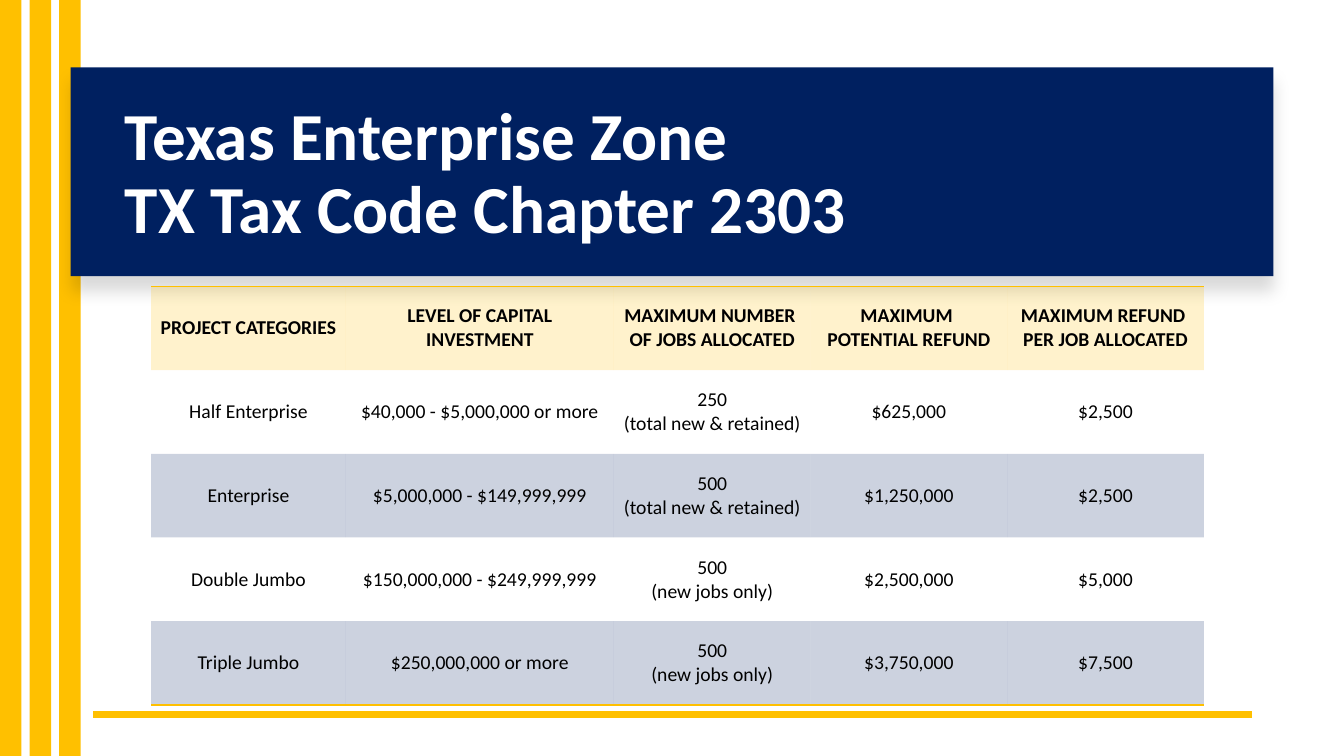
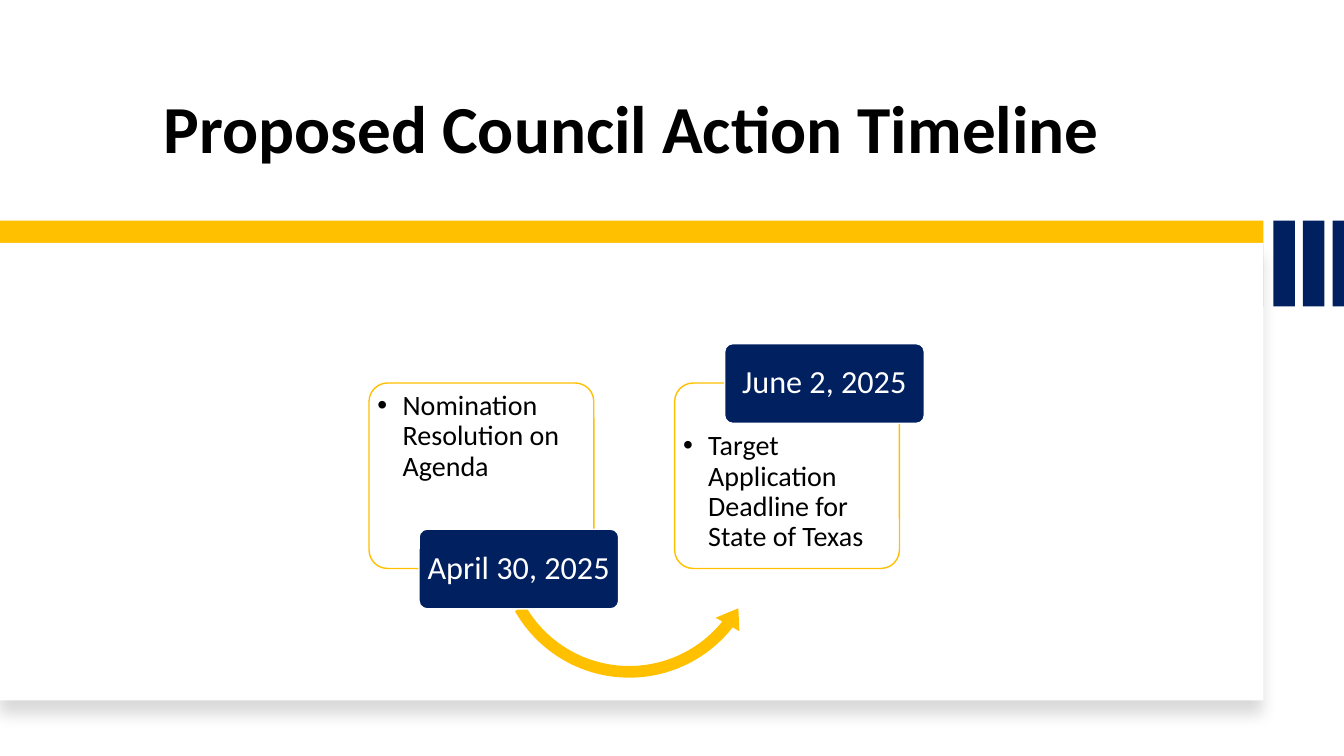
from lxml import etree
from pptx import Presentation
from pptx.dml.color import RGBColor
from pptx.enum.shapes import MSO_CONNECTOR, MSO_SHAPE
from pptx.enum.text import MSO_ANCHOR, PP_ALIGN
from pptx.oxml.ns import qn
from pptx.util import Inches, Pt

RECT = MSO_SHAPE.RECTANGLE
ROUND = MSO_SHAPE.ROUNDED_RECTANGLE
CURVE = MSO_SHAPE.LEFT_CIRCULAR_ARROW
LINE = MSO_CONNECTOR.STRAIGHT
LEFT, CENTER = PP_ALIGN.LEFT, PP_ALIGN.CENTER
TOP, MIDDLE, BOTTOM = MSO_ANCHOR.TOP, MSO_ANCHOR.MIDDLE, MSO_ANCHOR.BOTTOM

FONT = "Calibri"
COLORS = {"gold": "FFC000", "navy": "002060", "white": "FFFFFF", "black": "000000"}
PLAIN = "{2D5ABB26-0587-4C30-8999-92F81FD0307C}"
PAGE = (0, 0, Inches(13.33), Inches(7.5))

HEADS = ["PROJECT CATEGORIES", "LEVEL OF CAPITAL INVESTMENT",
         "MAXIMUM NUMBER \vOF JOBS ALLOCATED", "MAXIMUM \vPOTENTIAL REFUND",
         "MAXIMUM REFUND \vPER JOB ALLOCATED"]
ROWS = [
    ["Half Enterprise", "$40,000 - $5,000,000 or more",
     "250\n(total new & retained)", "$625,000", "$2,500"],
    ["Enterprise", "$5,000,000 - $149,999,999",
     "500\n(total new & retained)", "$1,250,000", "$2,500"],
    ["Double Jumbo", "$150,000,000 - $249,999,999",
     "500\n(new jobs only)", "$2,500,000", "$5,000"],
    ["Triple Jumbo", "$250,000,000 or more",
     "500\n(new jobs only)", "$3,750,000", "$7,500"],
]
SHARES = [1.93, 2.66, 1.95, 1.95, 1.95]
STEPS = [
    ("April 30, 2025", "Nomination Resolution on Agenda", 54.28, 0.03),
    ("June 2, 2025", "Target Application Deadline for State of Texas", 0, 0.43),
]


def part(box, x, y, w, h):
    left, top, wide, high = box
    return (left + round(wide * x / 100), top + round(high * y / 100),
            round(wide * w / 100), round(high * h / 100))


def rgb(name):
    return RGBColor.from_string(COLORS[name])


def paint(fill, name, alpha=100):
    fill.solid()
    fill.fore_color.rgb = rgb(name)
    if alpha < 100:
        color = fill._xPr.find(qn("a:solidFill"))[0]
        etree.SubElement(color, qn("a:alpha"), val=str(alpha * 1000))


def block(slide, box, fill, kind=RECT, line=None, alpha=100):
    shape = slide.shapes.add_shape(kind, *box)
    shape.shadow.inherit = False
    paint(shape.fill, fill, alpha)
    if line:
        shape.line.color.rgb = rgb(line)
        shape.line.width = Pt(1)
    else:
        shape.line.fill.background()
    return shape


def shade(shape):
    effects = shape._element.spPr.find(qn("a:effectLst"))
    cast = etree.SubElement(effects, qn("a:outerShdw"), blurRad=str(Pt(11)),
                            dist=str(Pt(10)), dir="5400000", algn="t", rotWithShape="0")
    color = etree.SubElement(cast, qn("a:srgbClr"), val=COLORS["black"])
    etree.SubElement(color, qn("a:alpha"), val="15000")


def write(frame, text, size, color="black", bold=False, align=CENTER, space=None):
    frame.word_wrap = True
    for i, words in enumerate(text.split("\n")):
        para = frame.add_paragraph() if i else frame.paragraphs[0]
        para.alignment = align
        if space:
            para.line_spacing = space
        for j, piece in enumerate(words.split("\v")):
            if j:
                para.add_line_break()
            run = para.add_run()
            run.text = piece
            run.font.name = FONT
            run.font.size = Pt(size)
            run.font.bold = bold
            run.font.color.rgb = rgb(color)


def inset(frame, side, top):
    frame.margin_left = frame.margin_right = Inches(side)
    frame.margin_top = frame.margin_bottom = Inches(top)


def bullet(para):
    props = para._p.get_or_add_pPr()
    props.set("marL", str(Inches(0.25)))
    props.set("indent", str(-Inches(0.25)))
    etree.SubElement(props, qn("a:buFont"), typeface="Arial")
    etree.SubElement(props, qn("a:buChar"), char="•")


def title(slide, box, text, color, align, anchor):
    frame = slide.shapes.add_textbox(*box).text_frame
    frame.vertical_anchor = anchor
    write(frame, text, 48, color, True, align, 0.9)


def stripes(slide, box, color):
    for i in range(3):
        block(slide, part(box, 2.2 * i, 0, 1.6, 100), color)


def edge(cell, side):
    props = cell._tc.get_or_add_tcPr()
    line = etree.Element(qn(side), w=str(Pt(1)))
    fill = etree.SubElement(line, qn("a:solidFill"))
    etree.SubElement(fill, qn("a:srgbClr"), val=COLORS["gold"])
    props.insert(0, line)


def grid(slide, box):
    data = [HEADS] + ROWS
    table = slide.shapes.add_table(len(data), len(HEADS), *box).table
    table.horz_banding = False
    table._tbl.tblPr.find(qn("a:tableStyleId")).text = PLAIN
    for col, share in zip(table.columns, SHARES):
        col.width = round(box[2] * share / sum(SHARES))
    for r, items in enumerate(data):
        table.rows[r].height = round(box[3] / len(data))
        for c, text in enumerate(items):
            cell = table.cell(r, c)
            cell.vertical_anchor = MIDDLE
            inset(cell, 0.07, 0.05)
            write(cell.text_frame, text, 14, bold=r == 0)
            if r % 2:
                cell.fill.background()
            else:
                paint(cell.fill, "navy" if r else "gold", 20)
            if r == 0:
                edge(cell, "a:lnT")
            elif r == len(data) - 1:
                edge(cell, "a:lnB")


def rule(slide, box):
    left, top, wide, _ = box
    line = slide.shapes.add_connector(LINE, left + wide, top, left, top)
    line.line.color.rgb = rgb("gold")
    line.line.width = Pt(4.5)
    etree.SubElement(line._element.spPr, qn("a:effectLst"))


def step(slide, box, date, task, drop, pad):
    card = block(slide, part(box, 0, 11.5, 89.93, 54.28), "white", ROUND, "gold", 90)
    card.adjustments[0] = 0.1
    frame = card.text_frame
    inset(frame, 0.03, 0.03)
    frame.margin_top = Inches(pad)
    frame.vertical_anchor = TOP
    write(frame, task, 20, align=LEFT, space=0.9)
    bullet(frame.paragraphs[0])
    badge = block(slide, part(box, 20, drop, 79.84, 23.3), "navy", ROUND, "white")
    badge.adjustments[0] = 0.1
    inset(badge.text_frame, 0.04, 0.03)
    badge.text_frame.vertical_anchor = MIDDLE
    write(badge.text_frame, date, 23, "white", space=0.9)


def flow(slide, box):
    arrow = block(slide, part(box, 21.78, 18.58, 50.09, 81.42), "gold", CURVE)
    for i, value in enumerate([0.042, 5.332, 23.087, 90.245, 0.049]):
        arrow.adjustments[i] = value
    for i, items in enumerate(STEPS):
        step(slide, part(box, 55 * i, 0, 45, 100), *items)


def zone(slide, box):
    stripes(slide, box, "gold")
    shade(block(slide, part(box, 5.25, 8.93, 89.5, 27.6), "navy"))
    title(slide, part(box, 8.55, 11.87, 81.55, 22.67),
          "Texas Enterprise Zone\vTX Tax Code Chapter 2303", "white", LEFT, MIDDLE)
    grid(slide, part(box, 11.25, 37.87, 78.32, 55.4))
    rule(slide, part(box, 6.9, 94.53, 86.27, 0))


def plan(slide, box):
    title(slide, part(box, 0, 5.6, 94, 17.33),
          "Proposed Council Action Timeline", "black", CENTER, BOTTOM)
    block(slide, part(box, 0, 29.2, 94, 11.33), "gold")
    shade(block(slide, part(box, 0, 32.13, 94, 60.53), "white"))
    flow(slide, part(box, 27.46, 45.47, 41.34, 45.2))
    stripes(slide, part(box, 94.75, 29.2, 100, 11.33), "navy")


def main():
    deck = Presentation()
    deck.slide_width, deck.slide_height = PAGE[2:]
    for build in (zone, plan):
        build(deck.slides.add_slide(deck.slide_layouts[6]), PAGE)
    deck.save("out.pptx")


if __name__ == "__main__":
    main()
